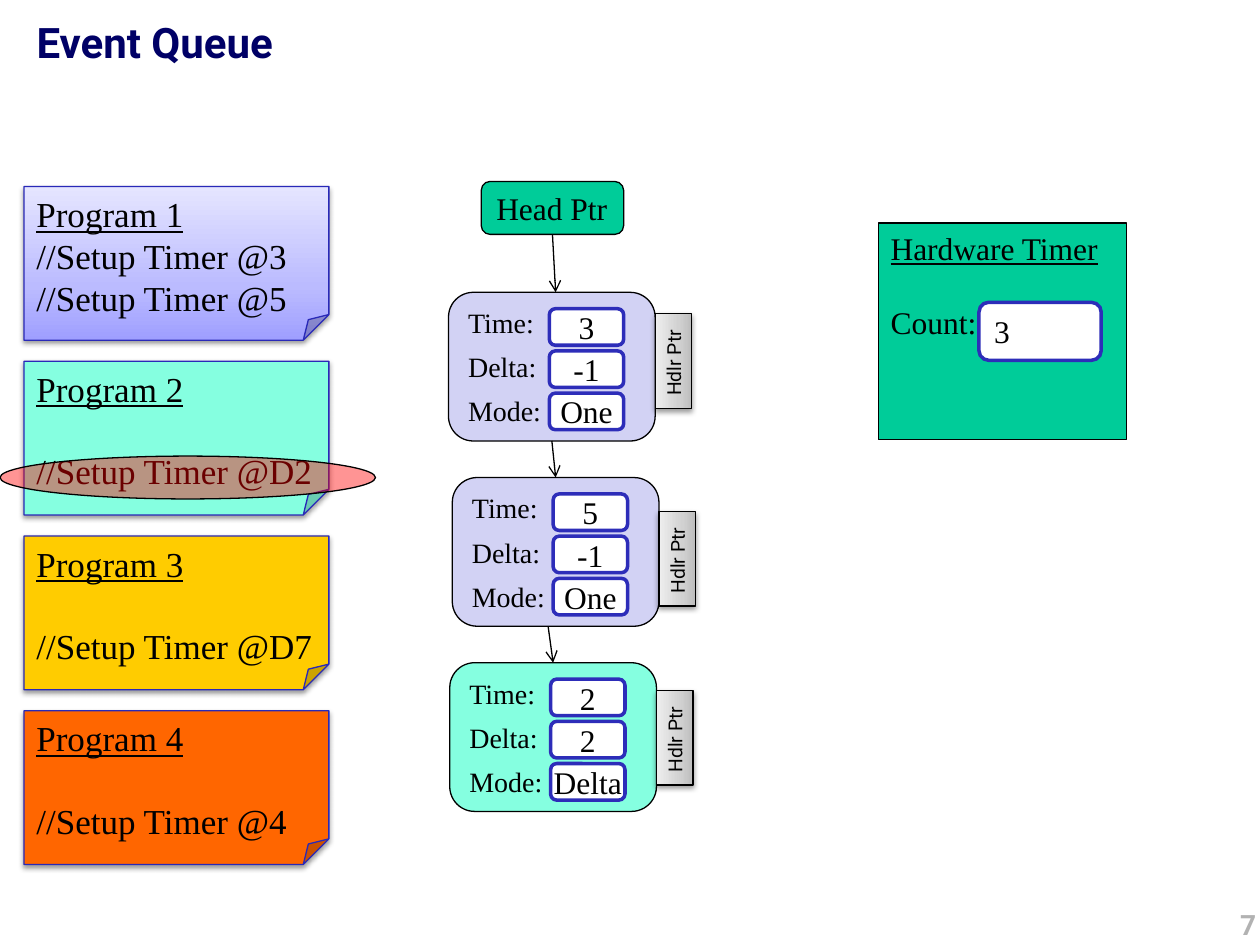
"""Build the event queue slide on a grid of 100 columns by 75 rows."""
from dataclasses import dataclass

from lxml import etree
from pptx import Presentation
from pptx.dml.color import RGBColor
from pptx.enum.shapes import MSO_CONNECTOR, MSO_SHAPE
from pptx.enum.text import MSO_ANCHOR, MSO_AUTO_SIZE, PP_ALIGN
from pptx.oxml.ns import qn
from pptx.util import Inches, Pt

RECTANGLE, ROUNDED = MSO_SHAPE.RECTANGLE, MSO_SHAPE.ROUNDED_RECTANGLE
NOTE, OVAL = MSO_SHAPE.FOLDED_CORNER, MSO_SHAPE.OVAL
STRAIGHT = MSO_CONNECTOR.STRAIGHT
TOP, MIDDLE = MSO_ANCHOR.TOP, MSO_ANCHOR.MIDDLE
LEFT, CENTER, RIGHT = PP_ALIGN.LEFT, PP_ALIGN.CENTER, PP_ALIGN.RIGHT
NO_FIT, FIT_SHAPE = MSO_AUTO_SIZE.NONE, MSO_AUTO_SIZE.SHAPE_TO_FIT_TEXT
TOP_SIDE, BOTTOM_SIDE = 0, 2
COLUMNS, ROWS, CELL = 100, 75, Inches(0.1)


@dataclass(frozen=True)
class Theme:
    """Fonts, colours and type sizes of the slide."""
    sans: str = "Roboto"
    serif: str = "Times New Roman"
    title: str = "000066"
    number: str = "B2B2B2"
    ink: str = "000000"
    white: str = "FFFFFF"
    note_line: str = "2929B8"
    field_line: str = "2D2DB9"
    green: str = "00CC99"
    mint: str = "85FFE0"
    lilac: str = "D2D2F4"
    yellow: str = "FFCC00"
    orange: str = "FF6600"
    red: str = "FF0000"
    violet_fade: tuple = ("9F9FFF", "BBBBFF", "E5E5FF")
    grey_fade: tuple = ("BDBDBD", "D1D1D1", "EEEEEE")
    title_size: int = 24
    note_size: int = 20
    field_size: int = 18
    label_size: int = 16
    tab_size: int = 11
    thin: float = 0.75
    thick: float = 2


THEME = Theme()


def cells(*counts):
    """Turn grid counts into lengths."""
    return [round(count * CELL) for count in counts]


def paint(shape, fill):
    """Fill a shape with one colour or an upward three-stop fade."""
    if isinstance(fill, str):
        shape.fill.solid()
        shape.fill.fore_color.rgb = RGBColor.from_string(fill)
        return
    shape.fill.gradient()
    shape.fill.gradient_angle = 90
    stops = shape.element.spPr.find(".//" + qn("a:gsLst"))
    for stop in list(stops):
        stops.remove(stop)
    for position, color in zip((0, 35, 100), fill):
        stop = etree.SubElement(stops, qn("a:gs"), pos=str(position * 1000))
        etree.SubElement(stop, qn("a:srgbClr"), val=color)


def add_shadow(shape):
    """Drop a soft shadow below a shape."""
    effects = shape.element.spPr.find(qn("a:effectLst"))
    shadow = etree.SubElement(effects, qn("a:outerShdw"), blurRad=str(Pt(3.1)),
                              dist=str(Pt(1.6)), dir="5400000", rotWithShape="0")
    color = etree.SubElement(shadow, qn("a:srgbClr"), val=THEME.ink)
    etree.SubElement(color, qn("a:alpha"), val="38000")


def add_box(page, kind, place, fill, line=THEME.ink, weight=THEME.thin):
    """Add a filled, outlined preset shape."""
    box = page.shapes.add_shape(kind, *cells(*place))
    box.shadow.inherit = False
    paint(box, fill)
    box.line.color.rgb = RGBColor.from_string(line)
    box.line.width = Pt(weight)
    return box


def write(box, lines, size, font=THEME.serif, color=THEME.ink, align=LEFT, anchor=MIDDLE, bold=False):
    """Write one paragraph per line and return the paragraphs."""
    frame = box.text_frame
    frame.text = "\n".join(lines)
    frame.word_wrap = True
    frame.vertical_anchor = anchor
    for para in frame.paragraphs:
        para.alignment = align
        para.font.name, para.font.size, para.font.bold = font, Pt(size), bold
        para.font.color.rgb = RGBColor.from_string(color)
    return frame.paragraphs


def add_heading(page):
    """Fill the title placeholder and add the slide number."""
    title = page.shapes.title
    title.left, title.top, title.width, title.height = cells(1.9, 0.8, 97.1, 10)
    write(title, ["Event Queue"], THEME.title_size, THEME.sans, THEME.title, anchor=TOP, bold=True)
    title.text_frame.auto_size = NO_FIT
    number = page.shapes.add_textbox(*cells(69, 71.5, 31, 3.5))
    number.text_frame.margin_right = Inches(0.03)
    write(number, ["7"], THEME.label_size, THEME.sans, THEME.number, RIGHT, TOP, True)


def add_program(page, row, fill, lines):
    """Add a program note whose last line sits on the third text row."""
    box = add_box(page, NOTE, (1.9, 14.8 + row * 13.87, 24.2, 12.2), fill, THEME.note_line)
    add_shadow(box)
    paras = write(box, lines, THEME.note_size, anchor=TOP)
    paras[0].font.underline = True
    if len(lines) == 2:
        paras[1].space_before = Pt(THEME.note_size * 1.15)


def add_field(page, place, text, align=CENTER, margin=0):
    """Add a white value field."""
    box = add_box(page, ROUNDED, place, THEME.white, THEME.field_line, THEME.thick)
    frame = box.text_frame
    frame.margin_left = frame.margin_right = Inches(margin)
    frame.margin_top = frame.margin_bottom = Inches(margin / 2)
    write(box, [text], THEME.field_size, align=align)


def add_event(page, left, top, fill, values):
    """Add a queue entry with its three value fields."""
    box = add_box(page, ROUNDED, (left, top, 16.4, 11.8), fill)
    for para in write(box, ["Time:", "Delta:", "Mode:"], THEME.label_size)[:2]:
        para.space_after = Pt(6)
    for row, value in enumerate(values):
        add_field(page, (left + 8, top + 1.3 + row * 3.35, 5.9, 2.9), value)
    return box


def add_handler(page, left, top):
    """Add an upright handler pointer tab."""
    tab = add_box(page, RECTANGLE, (left, top, 7.5, 2.9), THEME.grey_fade)
    tab.rotation = 270
    add_shadow(tab)
    write(tab, ["Hdlr Ptr"], THEME.tab_size, THEME.sans)
    tab.text_frame.word_wrap = False
    tab.text_frame.auto_size = FIT_SHAPE


def add_arrow(page, start, end, source=None, target=None):
    """Add a downward arrow, joined to the boxes given."""
    arrow = page.shapes.add_connector(STRAIGHT, *cells(*start, *end))
    if source:
        arrow.begin_connect(source, BOTTOM_SIDE)
    if target:
        arrow.end_connect(target, TOP_SIDE)
    arrow.line.color.rgb = RGBColor.from_string(THEME.ink)
    arrow.line.width = Pt(THEME.thin)
    etree.SubElement(arrow.line._get_or_add_ln(), qn("a:tailEnd"), type="arrow")
    etree.SubElement(arrow.element.spPr, qn("a:effectLst"))


def add_queue(page):
    """Add the head pointer and the chain of events."""
    head = add_box(page, ROUNDED, (38.2, 14.4, 11.3, 4.2), THEME.green)
    write(head, ["Head Ptr"], THEME.field_size)
    first = add_event(page, 35.6, 23.2, THEME.lilac, ("3", "-1", "One"))
    second = add_event(page, 35.9, 37.9, THEME.lilac, ("5", "-1", "One"))
    third = add_event(page, 35.7, 52.6, THEME.mint, ("2", "2", "Delta"))
    add_arrow(page, (43.9, 18.6), (44.1, 23.2), source=head)
    add_arrow(page, (43.7, 35), (44.1, 37.9), first, second)
    add_arrow(page, (43.5, 49.7), (43.9, 52.6), target=third)
    for left, top in ((49.7, 27.2), (50, 42.9), (49.8, 57.1)):
        add_handler(page, left, top)


def add_timer(page):
    """Add the hardware timer with its count."""
    box = add_box(page, RECTANGLE, (69.7, 17.7, 19.7, 17.2), THEME.green)
    heading, count = write(box, ["Hardware Timer", "Count:"], THEME.field_size, anchor=TOP)
    heading.font.underline = True
    count.space_before = Pt(THEME.field_size * 1.15)
    add_field(page, (77.7, 24, 9.7, 4.6), "3", LEFT, 0.1)


def add_highlight(page):
    """Add the see-through red oval."""
    oval = add_box(page, OVAL, (0, 36.2, 29.8, 3.4), THEME.red)
    color = oval.element.spPr.find(qn("a:solidFill"))[0]
    etree.SubElement(color, qn("a:alpha"), val="42000")


def main():
    """Build and save the deck."""
    deck = Presentation()
    deck.slide_width, deck.slide_height = cells(COLUMNS, ROWS)
    page = deck.slides.add_slide(deck.slide_layouts[5])
    add_heading(page)
    programs = ((THEME.violet_fade, ("@3", "@5")), (THEME.mint, ("@D2",)),
                (THEME.yellow, ("@D7",)), (THEME.orange, ("@4",)))
    for row, (fill, times) in enumerate(programs):
        add_program(page, row, fill, [f"Program {row + 1}"] + [f"//Setup Timer {time}" for time in times])
    add_highlight(page)
    add_queue(page)
    add_timer(page)
    deck.save("out.pptx")


if __name__ == "__main__":
    main()
